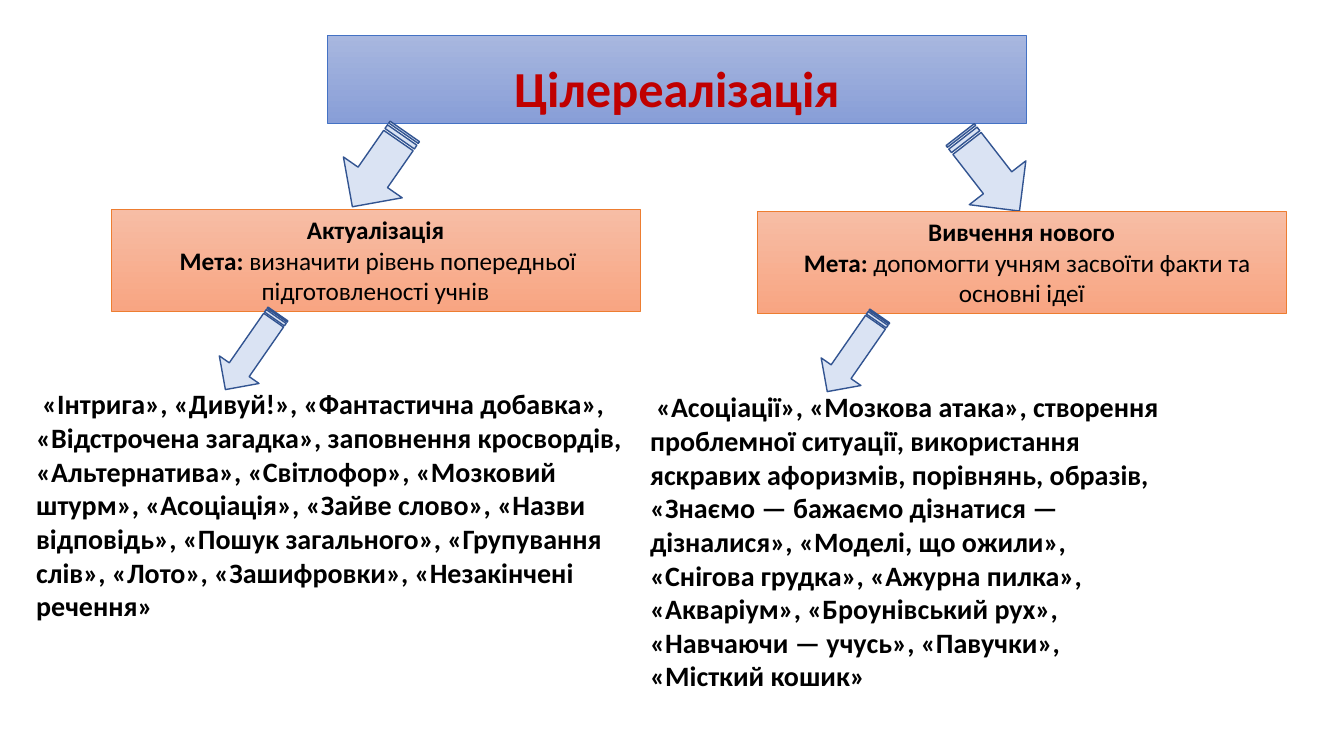
from dataclasses import dataclass

from pptx import Presentation
from pptx.dml.color import RGBColor
from pptx.enum.shapes import MSO_SHAPE
from pptx.enum.text import MSO_ANCHOR, PP_ALIGN
from pptx.util import Inches, Pt

BLACK = RGBColor(0x00, 0x00, 0x00)
RED = RGBColor(0xC0, 0x00, 0x00)
BLUE_TOP = RGBColor(0xA8, 0xB7, 0xDF)
BLUE_BOTTOM = RGBColor(0x88, 0x9E, 0xD7)
BLUE_LINE = RGBColor(0x44, 0x72, 0xC4)
ORANGE_TOP = RGBColor(0xF7, 0xBD, 0xA5)
ORANGE_BOTTOM = RGBColor(0xF8, 0xA5, 0x82)
ORANGE_LINE = RGBColor(0xED, 0x7D, 0x31)
ARROW_FILL = RGBColor(0xDA, 0xE3, 0xF3)
ARROW_LINE = RGBColor(0x32, 0x54, 0x91)

FONT = "Calibri"
WIDTH, HEIGHT = Inches(13.33), Inches(7.5)
COLUMN, ROW = WIDTH / 100, HEIGHT / 100
DOWN_LEFT, DOWN_RIGHT = 124.8, 52.2


@dataclass
class Box:
    """A rectangle in hundredths of the slide's width and height."""
    left: float
    top: float
    width: float
    height: float

    def inner(self, left, top, width, height):
        """Return a box placed from this box's top left corner."""
        return Box(self.left + left, self.top + top, width, height)

    def lengths(self):
        """Return left, top, width and height in slide units."""
        return (round(self.left * COLUMN), round(self.top * ROW),
                round(self.width * COLUMN), round(self.height * ROW))


@dataclass
class Branch:
    """One stage of the lesson with its goal, methods and layout."""
    banner: Box
    heading: str
    heading_shift: float
    goal: str
    goal_shift: float
    methods: str
    methods_area: tuple
    arrow_in: tuple
    arrow_in_angle: float
    arrow_out_left: float


BRANCHES = [
    Branch(Box(8.25, 27.73, 39.38, 13.47),
           "Актуалізація", -0.28,
           "визначити рівень попередньої підготовленості учнів", 0.05,
           "«Інтрига», «Дивуй!», «Фантастична добавка», «Відстрочена загадка», "
           "заповнення кросвордів, «Альтернатива», «Світлофор», «Мозковий штурм», "
           "«Асоціація», «Зайве слово», «Назви відповідь», «Пошук загального», "
           "«Групування слів», «Лото», «Зашифровки», «Незакінчені речення»",
           (-6.3, 22.8, 45.67, 32.8),
           (16.5, -10.1, 6.83, 9.47), DOWN_LEFT, 7.05),
    Branch(Box(56.33, 28, 39.38, 13.47),
           "Вивчення нового", -0.24,
           "допомогти учням засвоїти факти та основні ідеї", 0.11,
           "«Асоціації», «Мозкова атака», створення проблемної ситуації, "
           "використання яскравих афоризмів, порівнянь, образів, «Знаємо — бажаємо "
           "дізнатися — дізналися», «Моделі, що ожили», «Снігова грудка», "
           "«Ажурна пилка», «Акваріум», «Броунівський рух», «Навчаючи — учусь», "
           "«Павучки», «Місткий кошик»",
           (-8.7, 22.93, 39.83, 41.73),
           (13.72, -9.87, 7.2, 9.47), DOWN_RIGHT, 3.75),
]


def add_span(para, text, size, bold=False, color=BLACK):
    """Add one formatted run to a paragraph."""
    span = para.add_run()
    span.text = text
    span.font.name = FONT
    span.font.size = Pt(size)
    span.font.bold = bold
    span.font.color.rgb = color


def indent_first_line(para, inches):
    """Shift the first line of a paragraph sideways."""
    properties = para._p.get_or_add_pPr()
    properties.set("marL", "0")
    properties.set("indent", str(Inches(inches)))


def paint_gradient(shape, top, bottom, line):
    """Give a shape a vertical gradient and a thin outline."""
    shape.fill.gradient()
    shape.fill.gradient_angle = 270
    for stop, color, position in zip(shape.fill.gradient_stops, (top, bottom), (0, 1)):
        stop.color.rgb = color
        stop.position = position
    shape.line.color.rgb = line
    shape.line.width = Pt(0.5)


def add_title(page, box):
    """Format the title placeholder as the top banner."""
    title = page.shapes.title
    title.left, title.top, title.width, title.height = box.lengths()
    paint_gradient(title, BLUE_TOP, BLUE_BOTTOM, BLUE_LINE)
    title.text_frame.vertical_anchor = MSO_ANCHOR.BOTTOM
    para = title.text_frame.paragraphs[0]
    para.alignment = PP_ALIGN.CENTER
    para.line_spacing = 0.9
    add_span(para, "Цілереалізація", 36, True, RED)


def add_arrow(page, box, angle):
    """Draw a striped arrow turned by an angle."""
    arrow = page.shapes.add_shape(MSO_SHAPE.STRIPED_RIGHT_ARROW, *box.lengths())
    arrow.shadow.inherit = False
    arrow.rotation = angle
    arrow.fill.solid()
    arrow.fill.fore_color.rgb = ARROW_FILL
    arrow.line.color.rgb = ARROW_LINE
    arrow.line.width = Pt(1)


def add_banner(page, branch):
    """Draw the orange box with the stage's name and goal."""
    banner = page.shapes.add_shape(MSO_SHAPE.RECTANGLE, *branch.banner.lengths())
    banner.shadow.inherit = False
    paint_gradient(banner, ORANGE_TOP, ORANGE_BOTTOM, ORANGE_LINE)
    frame = banner.text_frame
    frame.word_wrap = True
    frame.vertical_anchor = MSO_ANCHOR.TOP
    heading, goal = frame.paragraphs[0], frame.add_paragraph()
    for para, shift in ((heading, branch.heading_shift), (goal, branch.goal_shift)):
        para.alignment = PP_ALIGN.CENTER
        indent_first_line(para, shift)
    add_span(heading, branch.heading, 18, True)
    add_span(goal, "Мета: ", 18, True)
    add_span(goal, branch.goal, 18)


def add_methods(page, box, text):
    """Write the list of teaching methods."""
    methods = page.shapes.add_textbox(*box.lengths())
    methods.text_frame.word_wrap = True
    para = methods.text_frame.paragraphs[0]
    indent_first_line(para, 0.06)
    add_span(para, text, 20, True)


def add_branch(page, branch):
    """Place a banner, its two arrows and its methods."""
    banner = branch.banner
    add_arrow(page, banner.inner(*branch.arrow_in), branch.arrow_in_angle)
    add_banner(page, branch)
    add_arrow(page, banner.inner(branch.arrow_out_left, 15.6, 6.85, 6.4), DOWN_LEFT)
    add_methods(page, banner.inner(*branch.methods_area), branch.methods)


def main():
    """Build the deck and save it."""
    deck = Presentation()
    deck.slide_width, deck.slide_height = WIDTH, HEIGHT
    page = deck.slides.add_slide(deck.slide_layouts[5])
    add_title(page, Box(24.38, 4.67, 51.98, 11.6))
    for branch in BRANCHES:
        add_branch(page, branch)
    deck.save("out.pptx")


if __name__ == "__main__":
    main()
